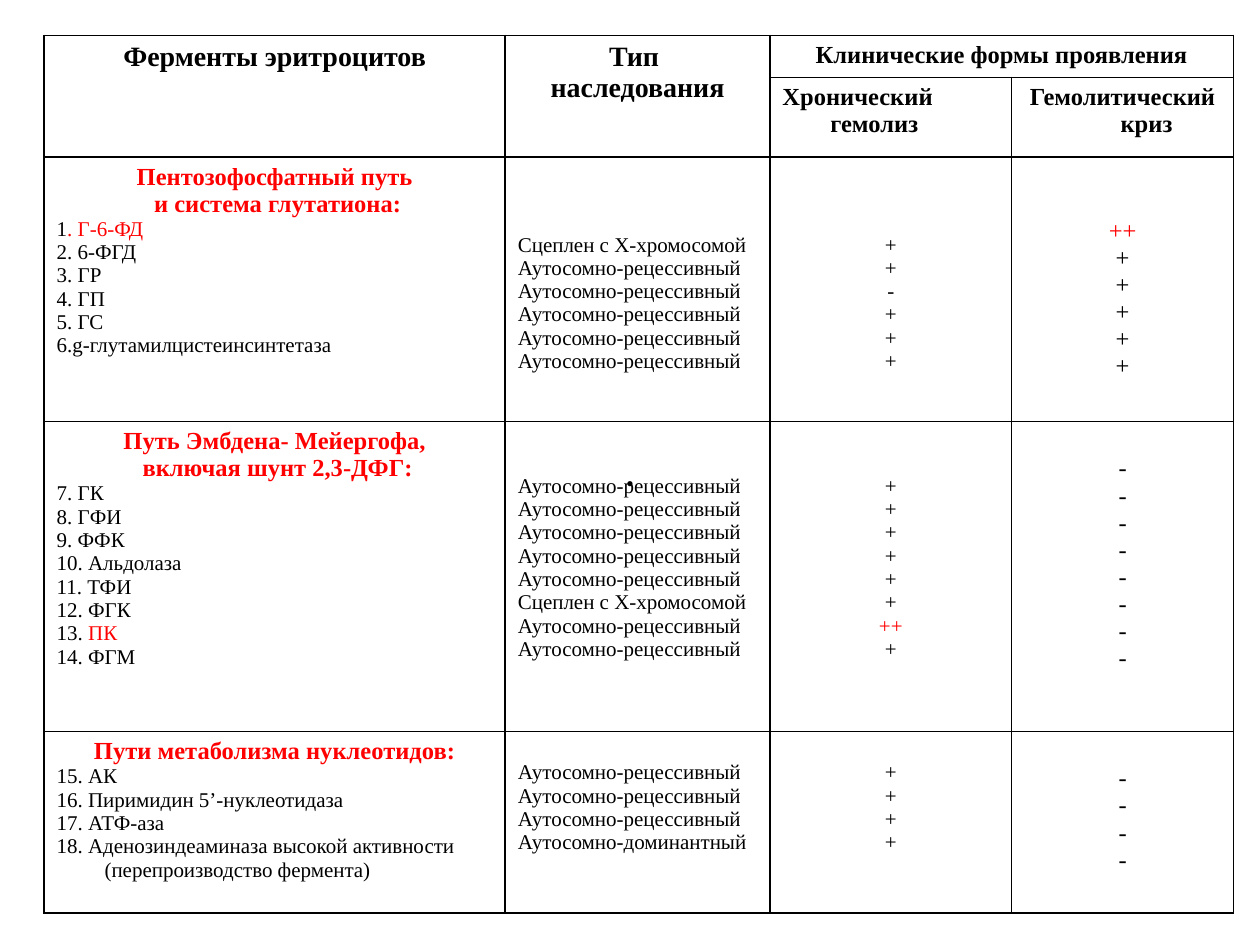
from dataclasses import dataclass

from lxml import etree
from pptx import Presentation
from pptx.dml.color import RGBColor
from pptx.enum.text import MSO_ANCHOR, PP_ALIGN
from pptx.oxml.ns import qn
from pptx.util import Inches, Pt

BLACK = RGBColor(0x00, 0x00, 0x00)
RED = RGBColor(0xFF, 0x00, 0x00)
CENTER = PP_ALIGN.CENTER
LEFT = PP_ALIGN.LEFT
MIDDLE = MSO_ANCHOR.MIDDLE
TABLE_FONT = "Times New Roman"
TITLE_FONT = "Calibri"
HANGING = Inches(0.38)
COLUMN_WIDTHS = [3.66, 2.1, 1.92, 1.76]
ROW_HEIGHTS = [0.33, 0.61, 2.1, 2.46, 1.44]
LINE_HEIGHT = {12: 0.185, 14: 0.215}
LINKED = "Сцеплен с Х-хромосомой"
RECESSIVE = "Аутосомно-рецессивный"
DOMINANT = "Аутосомно-доминантный"


@dataclass
class Line:
    text: str
    size: int = 12
    align: PP_ALIGN = LEFT
    bold: bool = False
    color: RGBColor = BLACK
    accent: str = ""


@dataclass
class Section:
    headings: list[str]
    enzymes: list[Line]
    inheritance: list[str]
    chronic: list[str]
    crisis: list[str]
    gap_lines: int
    crisis_gap_lines: int


SECTIONS = [
    Section(
        ["Пентозофосфатный путь", " и система глутатиона:"],
        [
            Line("1", accent=". Г-6-ФД"),
            Line("2. 6-ФГД"),
            Line("3. ГР"),
            Line("4. ГП"),
            Line("5. ГС"),
            Line("6.g-глутамилцистеинсинтетаза"),
        ],
        [LINKED] + [RECESSIVE] * 5,
        ["+", "+", "-", "+", "+", "+"],
        ["++"] + ["+"] * 5,
        3,
        2,
    ),
    Section(
        ["Путь Эмбдена- Мейергофа,", " включая шунт 2,3-ДФГ:"],
        [
            Line("7. ГК"),
            Line("8. ГФИ"),
            Line("9. ФФК"),
            Line("10. Альдолаза"),
            Line("11. ТФИ"),
            Line("12. ФГК"),
            Line("13. ", accent="ПК"),
            Line("14. ФГМ"),
        ],
        [RECESSIVE] * 5 + [LINKED] + [RECESSIVE] * 2,
        ["+"] * 6 + ["++", "+"],
        ["-"] * 8,
        2,
        1,
    ),
    Section(
        ["Пути метаболизма нуклеотидов:"],
        [
            Line("15. АК"),
            Line("16. Пиримидин 5’-нуклеотидаза"),
            Line("17. АТФ-аза"),
            Line("18. Аденозиндеаминаза высокой активности (перепроизводство фермента)"),
        ],
        [RECESSIVE] * 3 + [DOMINANT],
        ["+"] * 4,
        ["-"] * 4,
        1,
        1,
    ),
]


def header(text: str, size: int, align: PP_ALIGN = CENTER) -> Line:
    return Line(text, size, align, bold=True)


def marks(symbols: list[str], size: int) -> list[Line]:
    return [
        Line(symbol, size, CENTER, color=RED if symbol == "++" else BLACK)
        for symbol in symbols
    ]


def style_cell(cell) -> None:
    properties = cell._tc.get_or_add_tcPr()
    for side in ("a:lnL", "a:lnR", "a:lnT", "a:lnB"):
        border = etree.SubElement(properties, qn(side), w=str(Pt(1)))
        fill = etree.SubElement(border, qn("a:solidFill"))
        etree.SubElement(fill, qn("a:srgbClr"), val=str(BLACK))
    cell.fill.background()
    cell.margin_left = cell.margin_right = Inches(0.1)
    cell.margin_top = cell.margin_bottom = Inches(0.05)


def write_cell(cell, lines: list[Line], gap_lines: int = 0) -> None:
    if gap_lines:
        cell.margin_top = Inches(0.05 + gap_lines * LINE_HEIGHT[lines[0].size])
    frame = cell.text_frame
    for index, line in enumerate(lines):
        paragraph = frame.add_paragraph() if index else frame.paragraphs[0]
        paragraph.alignment = line.align
        properties = paragraph._p.get_or_add_pPr()
        properties.set("marL", str(HANGING))
        properties.set("indent", str(-HANGING))
        font = paragraph.font
        font.name = TABLE_FONT
        font.size = Pt(line.size)
        font.bold = line.bold
        font.color.rgb = line.color
        paragraph.add_run().text = line.text
        if line.accent:
            accent = paragraph.add_run()
            accent.text = line.accent
            accent.font.color.rgb = RED


def add_title(slide) -> None:
    title = slide.shapes.add_textbox(0, 0, Inches(10), Inches(7.5))
    frame = title.text_frame
    frame.word_wrap = True
    frame.vertical_anchor = MIDDLE
    paragraph = frame.paragraphs[0]
    paragraph.text = "."
    paragraph.alignment = CENTER
    paragraph.font.name = TITLE_FONT
    paragraph.font.size = Pt(20)
    paragraph.font.bold = True
    paragraph.font.color.rgb = BLACK


def add_enzyme_table(slide) -> None:
    table = slide.shapes.add_table(
        len(ROW_HEIGHTS), len(COLUMN_WIDTHS), Inches(0.35), Inches(0.28),
        Inches(sum(COLUMN_WIDTHS)), Inches(sum(ROW_HEIGHTS)),
    ).table
    table.first_row = False
    table.horz_banding = False
    for column, width in zip(table.columns, COLUMN_WIDTHS):
        column.width = Inches(width)
    for row, height in zip(table.rows, ROW_HEIGHTS):
        row.height = Inches(height)
    for cell in table.iter_cells():
        style_cell(cell)

    for column in (0, 1):
        table.cell(0, column).merge(table.cell(1, column))
    table.cell(0, 2).merge(table.cell(0, 3))
    write_cell(table.cell(0, 0), [header("Ферменты эритроцитов", 16)])
    write_cell(table.cell(0, 1), [header("Тип ", 16), header("наследования", 16)])
    write_cell(table.cell(0, 2), [header("Клинические формы проявления", 14)])
    write_cell(table.cell(1, 2), [header("Хронический гемолиз", 14, LEFT)])
    write_cell(table.cell(1, 3), [header("Гемолитический криз", 14)])

    for row, section in enumerate(SECTIONS, start=2):
        headings = [Line(text, 14, CENTER, True, RED) for text in section.headings]
        inheritance = [Line(text) for text in section.inheritance]
        write_cell(table.cell(row, 0), headings + section.enzymes)
        write_cell(table.cell(row, 1), inheritance, section.gap_lines)
        write_cell(table.cell(row, 2), marks(section.chronic, 12), section.gap_lines)
        write_cell(table.cell(row, 3), marks(section.crisis, 14), section.crisis_gap_lines)


def main() -> None:
    presentation = Presentation()
    presentation.slide_width = Inches(10)
    presentation.slide_height = Inches(7.5)
    slide = presentation.slides.add_slide(presentation.slide_layouts[6])
    add_title(slide)
    add_enzyme_table(slide)
    presentation.save("out.pptx")


if __name__ == "__main__":
    main()
